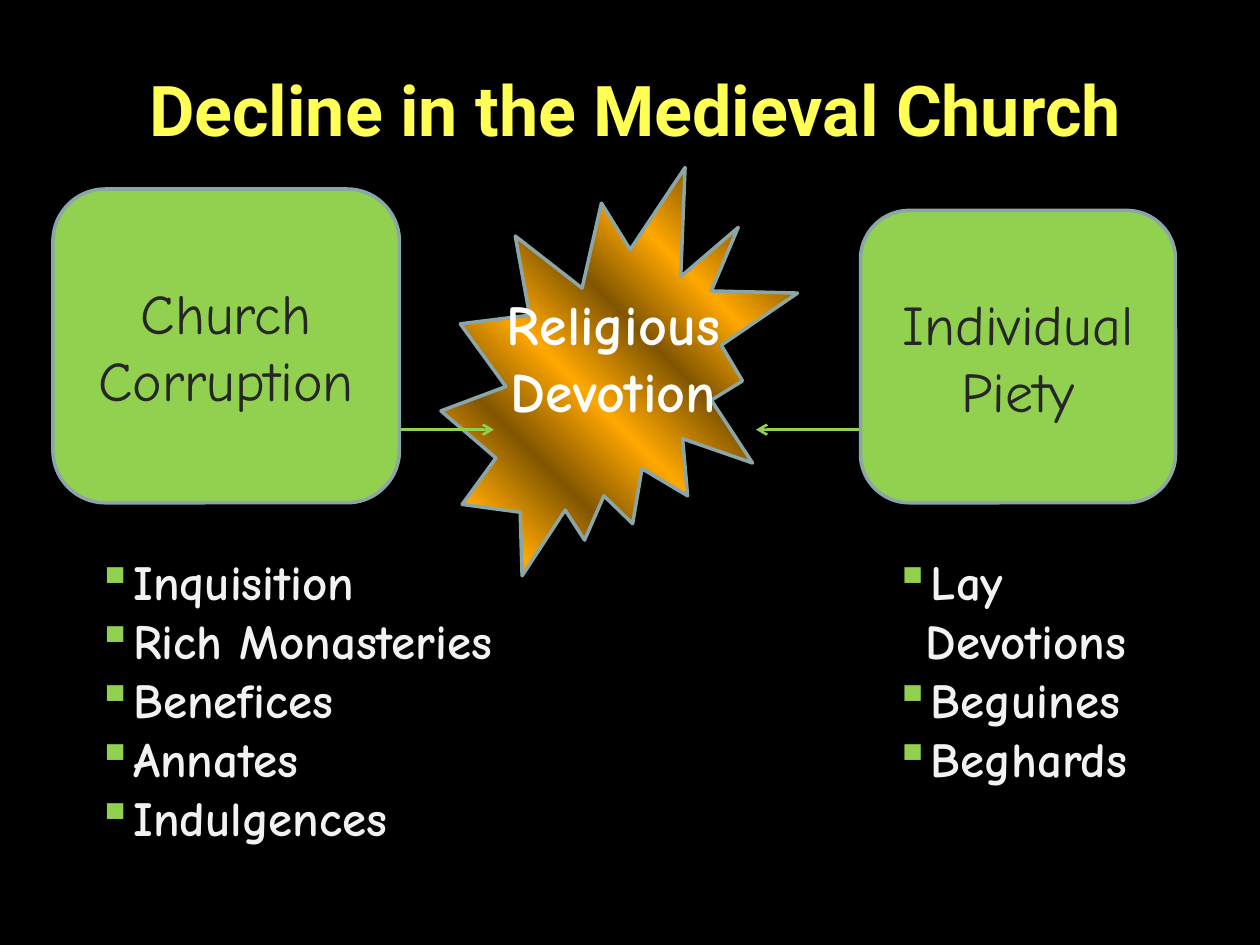
from lxml.etree import SubElement
from pptx import Presentation
from pptx.dml.color import RGBColor
from pptx.enum.shapes import MSO_CONNECTOR, MSO_SHAPE
from pptx.enum.text import MSO_ANCHOR, MSO_AUTO_SIZE, PP_ALIGN
from pptx.oxml.ns import qn
from pptx.util import Inches, Pt

COLORS = {
    "background": "000000",
    "title": "FFFF55",
    "green": "92D050",
    "outline": "8AA6A8",
    "dark_text": "262626",
    "white": "FFFFFF",
    "list_text": "F2F2F2",
    "bronze": "825600",
    "gold": "FFA800",
}
BODY_FONT = "Comic Neue"
TITLE_FONT = "Roboto"
GRADIENT_POSITIONS = (0, 13, 28, 43, 58, 72, 87, 100)


def rgb(name):
    return RGBColor.from_string(COLORS[name])


class SlideBuilder:
    """Draws styled elements on the current slide."""

    def __init__(self, slide):
        self.slide = slide
        slide.background.fill.solid()
        slide.background.fill.fore_color.rgb = rgb("background")

    def set_text(self, shape, lines, size, color, bold=False, font=BODY_FONT,
                 align=PP_ALIGN.CENTER, anchor=MSO_ANCHOR.TOP):
        frame = shape.text_frame
        frame.word_wrap = True
        frame.vertical_anchor = anchor
        for index, line in enumerate(lines):
            paragraph = frame.add_paragraph() if index else frame.paragraphs[0]
            paragraph.text = line
            paragraph.alignment = align
            for run in paragraph.runs:
                run.font.name = font
                run.font.size = Pt(size)
                run.font.bold = bold
                run.font.color.rgb = rgb(color)

    def title(self, text, left, top, width, height):
        shape = self.slide.shapes.title
        shape.left, shape.top = Inches(left), Inches(top)
        shape.width, shape.height = Inches(width), Inches(height)
        self.set_text(shape, [text], 40, "title", True, TITLE_FONT)
        shape.text_frame.auto_size = MSO_AUTO_SIZE.SHAPE_TO_FIT_TEXT

    def outlined_shape(self, kind, left, top, width, height):
        shape = self.slide.shapes.add_shape(
            kind, Inches(left), Inches(top), Inches(width), Inches(height))
        shape.shadow.inherit = False
        shape.line.color.rgb = rgb("outline")
        shape.line.width = Pt(2)
        return shape

    def box(self, text, *bounds):
        shape = self.outlined_shape(MSO_SHAPE.ROUNDED_RECTANGLE, *bounds)
        shape.fill.solid()
        shape.fill.fore_color.rgb = rgb("green")
        self.set_text(shape, [text], 32, "dark_text", anchor=MSO_ANCHOR.MIDDLE)

    def burst(self, *bounds):
        shape = self.outlined_shape(MSO_SHAPE.EXPLOSION2, *bounds)
        shape.fill.gradient()
        gradient = shape._element.spPr.find(qn("a:gradFill"))
        stops = gradient.find(qn("a:gsLst"))
        for stop in list(stops):
            stops.remove(stop)
        for index, position in enumerate(GRADIENT_POSITIONS):
            stop = SubElement(stops, qn("a:gs"), pos=str(position * 1000))
            color = COLORS["gold" if index % 2 else "bronze"]
            SubElement(stop, qn("a:srgbClr"), val=color)
        gradient.find(qn("a:lin")).set("ang", str(315 * 60000))

    def arrow(self, start, end, y):
        connector = self.slide.shapes.add_connector(
            MSO_CONNECTOR.STRAIGHT, Inches(start), Inches(y), Inches(end), Inches(y))
        connector.line.color.rgb = rgb("green")
        connector.line.width = Pt(1.5)
        line = connector._element.spPr.find(qn("a:ln"))
        SubElement(line, qn("a:tailEnd"), type="arrow")
        SubElement(connector._element.spPr, qn("a:effectLst"))

    def text_box(self, lines, left, top, width, height, **style):
        shape = self.slide.shapes.add_textbox(
            Inches(left), Inches(top), Inches(width), Inches(height))
        self.set_text(shape, lines, bold=True, **style)
        shape.text_frame.auto_size = MSO_AUTO_SIZE.SHAPE_TO_FIT_TEXT
        return shape

    def bullet_list(self, items, *bounds):
        shape = self.text_box(items, *bounds, size=28, color="list_text",
                              align=PP_ALIGN.LEFT)
        for paragraph in shape.text_frame.paragraphs:
            properties = paragraph._p.get_or_add_pPr()
            properties.set("marL", str(Inches(0.25)))
            properties.set("indent", str(-Inches(0.25)))
            bullet_color = SubElement(properties, qn("a:buClr"))
            SubElement(bullet_color, qn("a:srgbClr"), val=COLORS["green"])
            SubElement(properties, qn("a:buChar"), char="▪")


def main():
    presentation = Presentation()
    presentation.slide_width = Inches(10)
    presentation.slide_height = Inches(7.5)
    builder = SlideBuilder(
        presentation.slides.add_slide(presentation.slide_layouts[5]))

    builder.title("Decline in the Medieval Church", 0.25, 0.48, 9.58, 0.77)
    builder.burst(3.5, 1.33, 2.83, 3.24)
    builder.arrow(6.83, 6, 3.41)
    builder.arrow(3.08, 3.92, 3.41)
    builder.box("Church\nCorruption", 0.42, 1.5, 2.75, 2.49)
    builder.box("Individual\nPiety", 6.83, 1.67, 2.5, 2.32)
    builder.text_box(["Religious\nDevotion"], 3.58, 2.25, 2.58, 1.18,
                     size=32, color="white")
    builder.bullet_list(
        ["Inquisition", "Rich Monasteries", "Benefices", "Annates", "Indulgences"],
        0.67, 4.33, 3.67, 2.46)
    builder.bullet_list(["Lay Devotions", "Beguines", "Beghards"],
                        7, 4.33, 2.58, 1.99)
    presentation.save("out.pptx")


if __name__ == "__main__":
    main()
